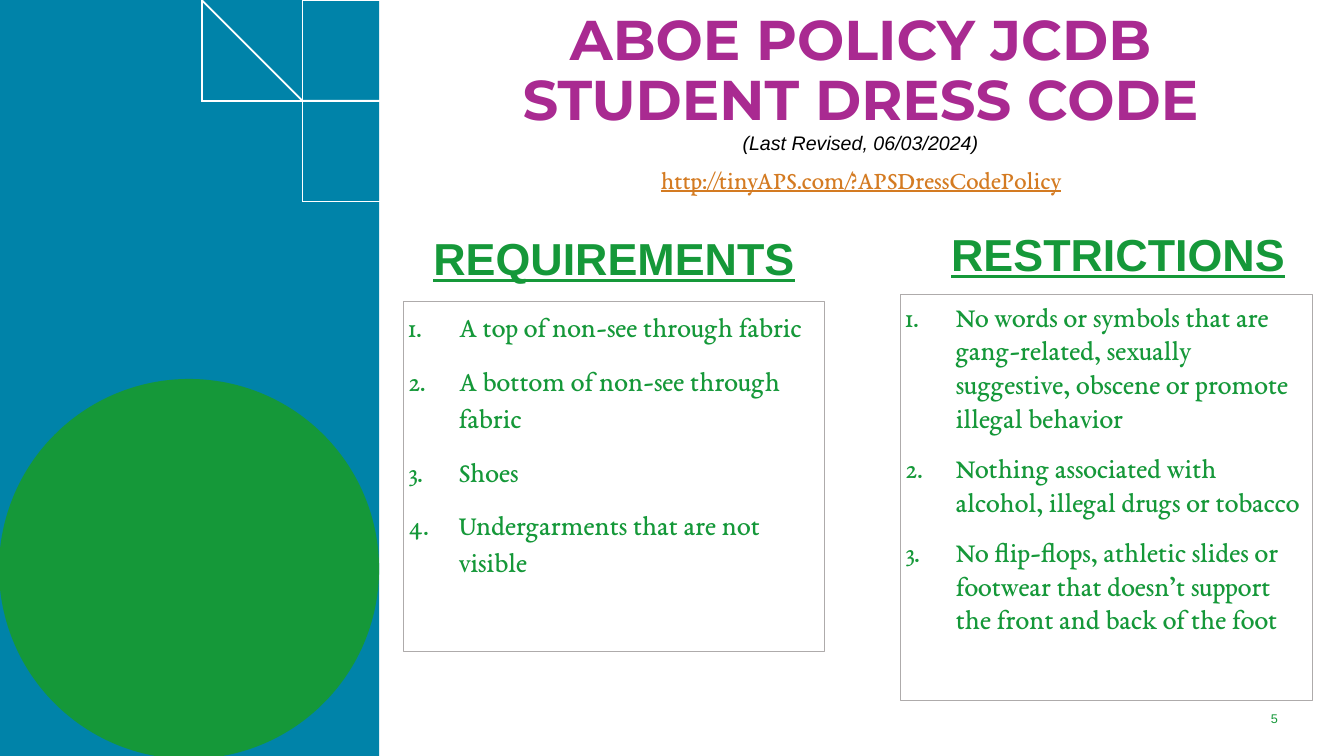
"""Build the student dress code slide with its requirements and restrictions."""
from math import cos, pi, sin

from lxml.etree import SubElement
from pptx import Presentation
from pptx.dml.color import RGBColor
from pptx.enum.shapes import MSO_SHAPE
from pptx.enum.text import MSO_ANCHOR, MSO_AUTO_SIZE, PP_ALIGN
from pptx.oxml.ns import qn
from pptx.util import Inches, Pt

BLUE = RGBColor(0x00, 0x83, 0xA9)
GREEN = RGBColor(0x15, 0x98, 0x39)
PURPLE = RGBColor(0xA9, 0x2A, 0x91)
ORANGE = RGBColor(0xD4, 0x7B, 0x22)
GREY = RGBColor(0xAE, 0xAB, 0xAB)
WHITE = RGBColor(0xFF, 0xFF, 0xFF)
BLACK = RGBColor(0x00, 0x00, 0x00)


def set_font(font, name, size, color, bold=False, italic=False, underline=False):
    font.name, font.size = name, Pt(size)
    font.color.rgb = color
    font.bold, font.italic, font.underline = bold, italic, underline


def paint(shape, color):
    shape.shadow.inherit = False
    shape.fill.solid()
    shape.fill.fore_color.rgb = color
    shape.line.fill.background()


presentation = Presentation()
presentation.slide_width, presentation.slide_height = Inches(13.33), Inches(7.5)
slide = presentation.slides.add_slide(presentation.slide_layouts[5])
shapes = slide.shapes

side_panel = shapes.add_shape(
    MSO_SHAPE.RECTANGLE, Inches(-0.01), 0, Inches(3.77), Inches(7.54))
paint(side_panel, BLUE)

RING_CENTRE, RING_COUNT, STEPS = 3.76, 17, 12
ring_builder = shapes.build_freeform(scale=Inches(1))
for ring in range(RING_COUNT):
    radius = 1.87 - ring * 1.64 / (RING_COUNT - 1)
    angles = [pi / 2 * step / STEPS for step in range(STEPS + 1)]
    points = [(RING_CENTRE - radius * cos(a), radius * sin(a)) for a in angles]
    ring_builder.move_to(*points[0])
    ring_builder.add_line_segments(points[1:], close=False)
rings = ring_builder.convert_to_shape()
rings.shadow.inherit = False
rings.fill.background()
rings.line.color.rgb, rings.line.width = WHITE, Pt(1.3)

green_disc = shapes.add_shape(
    MSO_SHAPE.OVAL, Inches(-0.01), Inches(3.76), Inches(3.77), Inches(3.77))
paint(green_disc, GREEN)

title = shapes.title
title.left, title.top = Inches(3.74), Inches(0.07)
title.width, title.height = Inches(9.59), Inches(1.68)
title.text_frame.auto_size = MSO_AUTO_SIZE.NONE
title.text_frame.vertical_anchor = MSO_ANCHOR.TOP
heading = title.text_frame.paragraphs[0]
heading.alignment, heading.line_spacing = PP_ALIGN.CENTER, 0.9
for line in ("ABOE POLICY JCDB", "STUDENT DRESS CODE"):
    run = heading.add_run()
    run.text = line
    set_font(run.font, "Montserrat", 40, PURPLE, bold=True)
    heading.add_line_break()
revision = heading.add_run()
revision.text = "(Last Revised, 06/03/2024)"
set_font(revision.font, "Arial", 14, BLACK, italic=True)

captions = [
    ("REQUIREMENTS", 4, 2.24, 4.18, 0.57, "Arial", 32, GREEN, True, True),
    ("RESTRICTIONS", 9, 2.2, 4.18, 0.57, "Arial", 32, GREEN, True, True),
    ("http://tinyAPS.com/?APSDressCodePolicy",
     3.75, 1.58, 9.58, 0.4, "EB Garamond", 18, ORANGE, False, True),
    ("5", 12.1, 7, 1.08, 0.3, "Arial", 9, GREEN, False, False),
]
for text, left, top, width, height, face, size, color, bold, underline in captions:
    caption = shapes.add_textbox(
        Inches(left), Inches(top), Inches(width), Inches(height)).text_frame
    caption.word_wrap = True
    caption.text = text
    caption.paragraphs[0].alignment = PP_ALIGN.CENTER
    set_font(caption.paragraphs[0].font, face, size, color, bold, underline=underline)

rule_lists = [
    (4, 2.99, 4.18, 3.47, 1.1, [
        "A top of non-see through fabric",
        "A bottom of non-see through fabric",
        "Shoes",
        "Undergarments that are not visible",
    ]),
    (8.93, 2.92, 4.09, 4.03, 1.0, [
        "No words or symbols that are gang-related, sexually suggestive, "
        "obscene or promote illegal behavior",
        "Nothing associated with alcohol, illegal drugs or tobacco",
        "No flip-flops, athletic slides or footwear that doesn’t support "
        "the front and back of the foot",
    ]),
]
for left, top, width, height, spacing, rules in rule_lists:
    rule_box = shapes.add_shape(
        MSO_SHAPE.RECTANGLE, Inches(left), Inches(top), Inches(width), Inches(height))
    rule_box.shadow.inherit = False
    rule_box.fill.background()
    rule_box.line.color.rgb, rule_box.line.width = GREY, Pt(0.75)
    frame = rule_box.text_frame
    frame.word_wrap, frame.vertical_anchor = True, MSO_ANCHOR.TOP
    frame.margin_left = frame.margin_right = Inches(0.05)
    frame.margin_top = frame.margin_bottom = Inches(0.05)
    frame.text = "\n".join(rules)
    for index, rule in enumerate(frame.paragraphs):
        rule.alignment, rule.line_spacing = PP_ALIGN.LEFT, spacing
        rule.space_before = Pt(12 if index else 0)
        properties = rule._p.get_or_add_pPr()
        properties.set("marL", str(Inches(0.5)))
        properties.set("indent", str(Inches(-0.5)))
        bullet_color = SubElement(properties, qn("a:buClr"))
        SubElement(bullet_color, qn("a:srgbClr"), val=str(GREEN))
        SubElement(properties, qn("a:buFont"), typeface="EB Garamond")
        SubElement(properties, qn("a:buAutoNum"), type="arabicPeriod")
        set_font(rule.font, "EB Garamond", 20, GREEN)

presentation.save("out.pptx")
